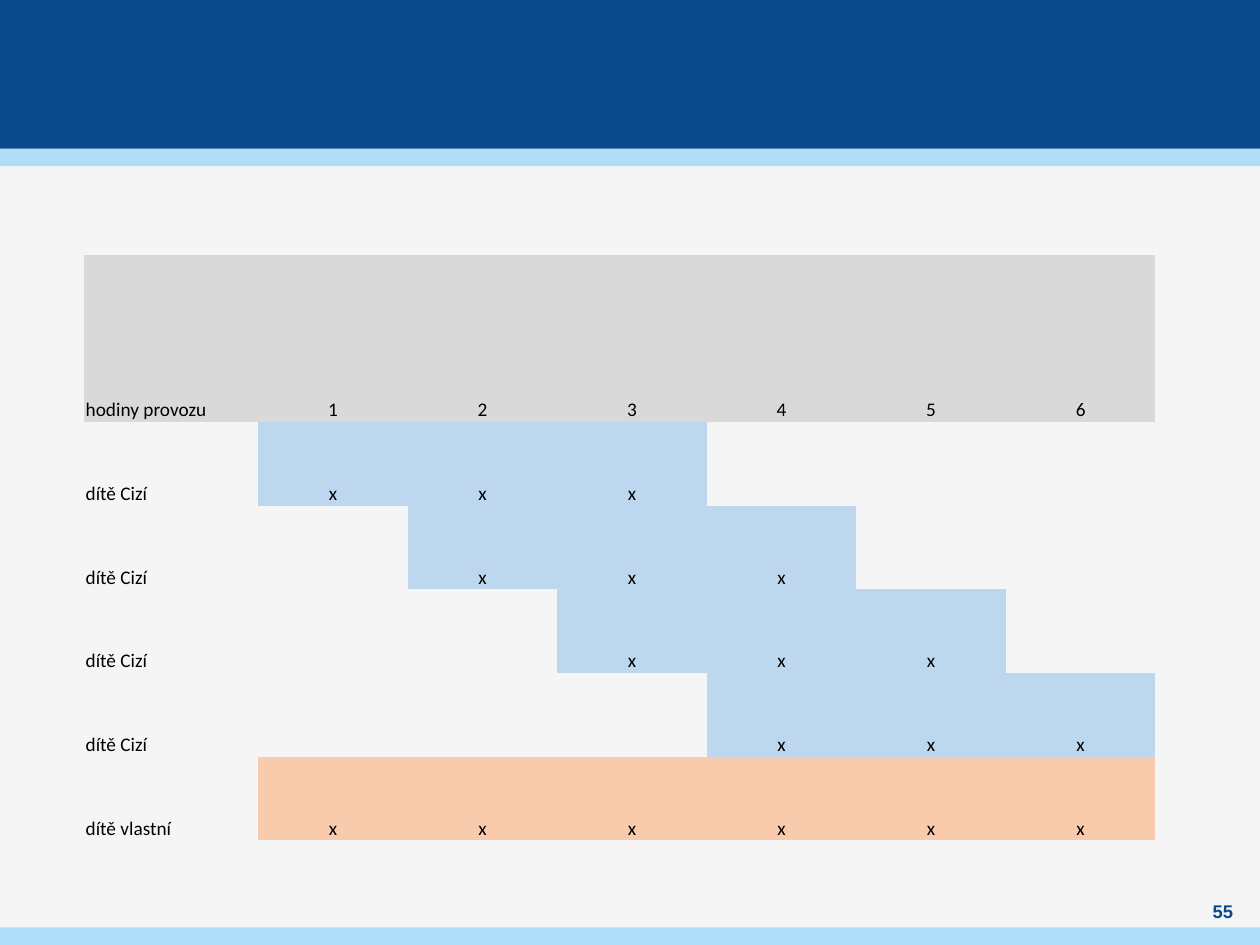
from dataclasses import dataclass

import pptx
import pptx.dml.color
import pptx.enum.shapes
import pptx.enum.text
import pptx.oxml.ns
import pptx.util
from pptx.util import Inches


def color(value):
    return pptx.dml.color.RGBColor.from_string(value)


@dataclass(frozen=True)
class Theme:
    background: str = "F5F5F5"
    navy: str = "084A8B"
    sky: str = "AFDDFA"
    header: str = "D9D9D9"
    other_child: str = "BDD7EE"
    own_child: str = "F8CBAD"
    text: str = "000000"
    table_font: str = "Calibri"
    table_size: float = 11
    number_font: str = "Arial"
    number_size: float = 10.5


THEME = Theme()
NO_GRID_STYLE = "{2D5ABB26-0587-4C30-8999-92F81FD0307C}"
HOURS = range(1, 7)

# Row label, hours attended, fill of those hours
CHILDREN = [
    ("dítě Cizí", range(start, start + 3), THEME.other_child)
    for start in range(1, 5)
] + [("dítě vlastní", HOURS, THEME.own_child)]


def style_paragraph(paragraph, font, size, text_color, centered=True, bold=False):
    alignment = pptx.enum.text.PP_ALIGN
    paragraph.alignment = alignment.CENTER if centered else alignment.LEFT
    paragraph.font.name = font
    paragraph.font.size = pptx.util.Pt(size)
    paragraph.font.bold = bold
    paragraph.font.color.rgb = color(text_color)


def add_band(slide, left, top, width, height, fill):
    band = slide.shapes.add_shape(
        pptx.enum.shapes.MSO_SHAPE.RECTANGLE, left, top, width, height)
    band.shadow.inherit = False
    band.fill.solid()
    band.fill.fore_color.rgb = color(fill)
    band.line.fill.background()


def add_frame(slide, left, top, width, height):
    """Header block, its accent stripe and the footer stripe."""
    header, stripe = Inches(1.18), Inches(0.14)
    add_band(slide, left, top + header, width, stripe, THEME.sky)
    add_band(slide, left, top, width, header, THEME.navy)
    add_band(slide, left, top + height - stripe, width, stripe, THEME.sky)


def fill_cell(cell, text, fill, centered):
    cell.vertical_anchor = pptx.enum.text.MSO_ANCHOR.BOTTOM
    cell.margin_left = cell.margin_right = cell.margin_top = Inches(0.01)
    cell.margin_bottom = 0
    if fill:
        cell.fill.solid()
        cell.fill.fore_color.rgb = color(fill)
    else:
        cell.fill.background()
    cell.text = text
    style_paragraph(cell.text_frame.paragraphs[0], THEME.table_font,
                    THEME.table_size, THEME.text, centered)


def add_schedule(slide, left, top, width, height):
    """Table of operating hours; the header is twice as tall as a child row."""
    frame = slide.shapes.add_table(
        len(CHILDREN) + 1, len(HOURS) + 1, left, top, width, height)
    table = frame.table
    style = next(frame.element.iter(pptx.oxml.ns.qn("a:tableStyleId")))
    style.text = NO_GRID_STYLE
    table.first_row = table.horz_banding = False

    label_width = Inches(1.38)
    for index, column in enumerate(table.columns):
        column.width = (width - label_width) // len(HOURS) if index else label_width
    row_height = height // (len(CHILDREN) + 2)
    for index, row in enumerate(table.rows):
        row.height = row_height if index else 2 * row_height

    # Header row
    for column, text in enumerate(["hodiny provozu", *map(str, HOURS)]):
        fill_cell(table.cell(0, column), text, THEME.header, column > 0)

    # Children and the hours they attend
    for row, (label, attended, fill) in enumerate(CHILDREN, start=1):
        fill_cell(table.cell(row, 0), label, None, False)
        for hour in HOURS:
            present = hour in attended
            fill_cell(table.cell(row, hour), "x" if present else "",
                      fill if present else None, True)


def add_page_number(slide, left, top, width, height, number):
    box = slide.shapes.add_textbox(left, top, width, height)
    text_frame = box.text_frame
    text_frame.word_wrap = True
    text_frame.vertical_anchor = pptx.enum.text.MSO_ANCHOR.MIDDLE
    text_frame.margin_left = text_frame.margin_right = 0
    text_frame.margin_top = text_frame.margin_bottom = 0
    text_frame.text = str(number)
    style_paragraph(text_frame.paragraphs[0], THEME.number_font,
                    THEME.number_size, THEME.navy, bold=True)


def main():
    presentation = pptx.Presentation()
    presentation.slide_width = Inches(10)
    presentation.slide_height = Inches(7.5)
    slide = presentation.slides.add_slide(presentation.slide_layouts[6])
    slide.background.fill.solid()
    slide.background.fill.fore_color.rgb = color(THEME.background)

    add_frame(slide, 0, 0, presentation.slide_width, presentation.slide_height)
    add_schedule(slide, Inches(0.67), Inches(2.02), Inches(8.5), Inches(4.65))
    add_page_number(slide, Inches(9.45), Inches(7.13), Inches(0.51), Inches(0.2), 55)
    presentation.save("out.pptx")


if __name__ == "__main__":
    main()
